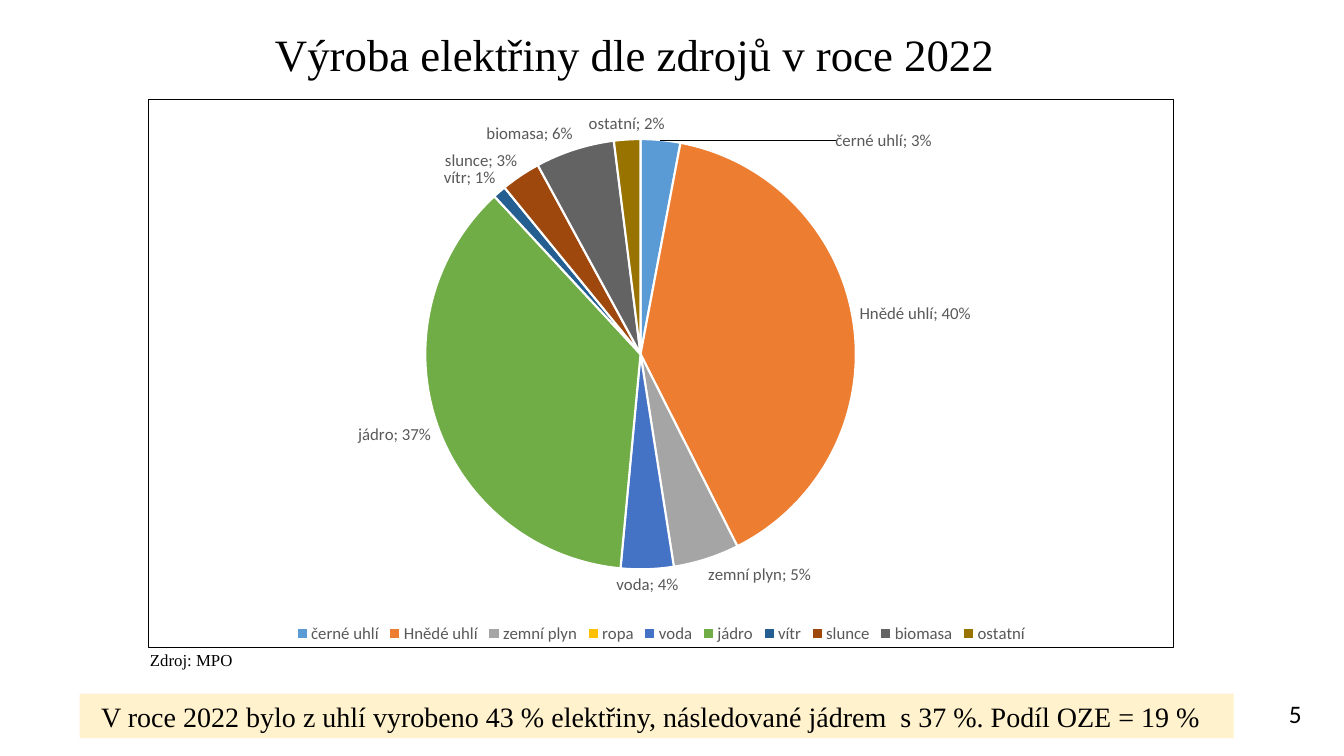
import copy
import pptx
import pptx.chart.data
import pptx.dml.color
import pptx.enum.chart
import pptx.enum.shapes
import pptx.enum.text
import pptx.oxml
import pptx.oxml.ns
import pptx.util
from pptx.util import Cm

SERIF, SANS = "Times New Roman", "Calibri"
SOURCES = [
    ("černé uhlí", 3, "5B9BD5"),
    ("Hnědé uhlí", 40, "ED7D31"),
    ("zemní plyn", 5, "A5A5A5"),
    ("ropa", 0, "FFC000"),
    ("voda", 4, "4472C4"),
    ("jádro", 37, "70AD47"),
    ("vítr", 1, "255E91"),
    ("slunce", 3, "9E480E"),
    ("biomasa", 6, "636363"),
    ("ostatní", 2, "997300"),
]


def color(value):
    return pptx.dml.color.RGBColor.from_string(value)


def chart_xml(tag, content):
    namespaces = pptx.oxml.ns.nsdecls("c", "a")
    return pptx.oxml.parse_xml(f"<c:{tag} {namespaces}>{content}</c:{tag}>")


def manual_layout(**values):
    parts = "".join(f'<c:{key} val="{value}"/>' for key, value in values.items())
    return chart_xml("layout", f"<c:manualLayout>{parts}</c:manualLayout>")


def style_font(font, name, size, value):
    font.name = name
    font.size = pptx.util.Pt(size)
    font.color.rgb = color(value)


def write(shape, text, name, size):
    frame = shape.text_frame
    frame.word_wrap = True
    para = frame.paragraphs[0]
    para.alignment = pptx.enum.text.PP_ALIGN.LEFT
    span = para.add_run()
    span.text = text
    style_font(span.font, name, size, "000000")


def add_text(page, box, text, name, size):
    write(page.shapes.add_textbox(*box), text, name, size)


def add_banner(page, box, text):
    banner = page.shapes.add_shape(pptx.enum.shapes.MSO_SHAPE.RECTANGLE, *box)
    banner.shadow.inherit = False
    banner.fill.solid()
    banner.fill.fore_color.rgb = color("FFF2CC")
    banner.line.fill.background()
    banner.text_frame.margin_left = Cm(0.54)
    banner.text_frame.margin_right = 0
    banner.text_frame.vertical_anchor = pptx.enum.text.MSO_ANCHOR.MIDDLE
    write(banner, text, SERIF, 20)


def label_slices(series):
    labels = series.data_labels
    style_font(labels.font, SANS, 12, "595959")
    labels.position = pptx.enum.chart.XL_LABEL_POSITION.OUTSIDE_END
    labels.show_value = False
    labels.show_category_name = True
    labels.show_percentage = True
    group = labels._element
    bubble = group.find(pptx.oxml.ns.qn("c:showBubbleSize"))
    bubble.addnext(chart_xml("separator", "; "))

    # Black coal label stands off to the right, on a leader line
    moved = chart_xml("dLbl", '<c:idx val="0"/>')
    moved.append(manual_layout(x=0.17, y=0.03))
    for child in group:
        if child.tag != pptx.oxml.ns.qn("c:showLeaderLines"):
            moved.append(copy.deepcopy(child))
    # Oil has no slice, so no label
    hidden = chart_xml("dLbl", '<c:idx val="3"/><c:delete val="1"/>')
    group.insert(0, moved)
    group.insert(1, hidden)


def add_source_pie(page, box):
    names, shares, fills = zip(*SOURCES)
    data = pptx.chart.data.CategoryChartData()
    data.categories = names
    data.add_series("Series 1", shares)
    kind = pptx.enum.chart.XL_CHART_TYPE.PIE
    chart = page.shapes.add_chart(kind, *box, data).chart
    style_font(chart.font, SANS, 10, "000000")
    chart.has_title = False

    # Legend
    chart.has_legend = True
    chart.legend.position = pptx.enum.chart.XL_LEGEND_POSITION.BOTTOM
    chart.legend.include_in_layout = False
    style_font(chart.legend.font, SANS, 12, "595959")

    # Slices
    plot = chart.plots[0]
    plot.vary_by_categories = True
    series = plot.series[0]
    for index, fill in enumerate(fills):
        look = series.points[index].format
        look.fill.solid()
        look.fill.fore_color.rgb = color(fill)
        look.line.color.rgb = color("FFFFFF")
        look.line.width = pptx.util.Pt(1.5)
    label_slices(series)

    # Plot area and frame
    root = chart._chartSpace
    area = root.find(".//" + pptx.oxml.ns.qn("c:plotArea"))
    for old in area.findall(pptx.oxml.ns.qn("c:layout")):
        area.remove(old)
    area.insert(0, manual_layout(layoutTarget="inner", xMode="edge", yMode="edge",
                                 x=0.27, y=0.07, w=0.42, h=0.79))
    frame = chart_xml("spPr", '<a:noFill/><a:ln w="9525"><a:solidFill>'
                      '<a:srgbClr val="000000"/></a:solidFill></a:ln>')
    root.find(pptx.oxml.ns.qn("c:chart")).addnext(frame)


def build_slide(deck):
    page = deck.slides.add_slide(deck.slide_layouts[6])
    add_source_pie(page, (Cm(3.73), Cm(2.49), Cm(25.86), Cm(13.84)))
    add_text(page, (Cm(6.68), Cm(0.56), Cm(23.65), Cm(1.63)),
             "Výroba elektřiny dle zdrojů v roce 2022", SERIF, 32)
    add_banner(page, (Cm(2.01), Cm(17.48), Cm(29.08), Cm(1.12)),
               "V roce 2022 bylo z uhlí vyrobeno 43 % elektřiny, "
               "následované jádrem  s 37 %. Podíl OZE = 19 %")
    add_text(page, (Cm(32.23), Cm(17.48), Cm(1.09), Cm(1.02)), "5", SANS, 18)
    add_text(page, (Cm(3.53), Cm(16.25), Cm(6), Cm(0.76)), "Zdroj: MPO", SERIF, 12)


def main():
    deck = pptx.Presentation()
    deck.slide_width, deck.slide_height = Cm(33.87), Cm(19.05)
    build_slide(deck)
    deck.save("out.pptx")


if __name__ == "__main__":
    main()
